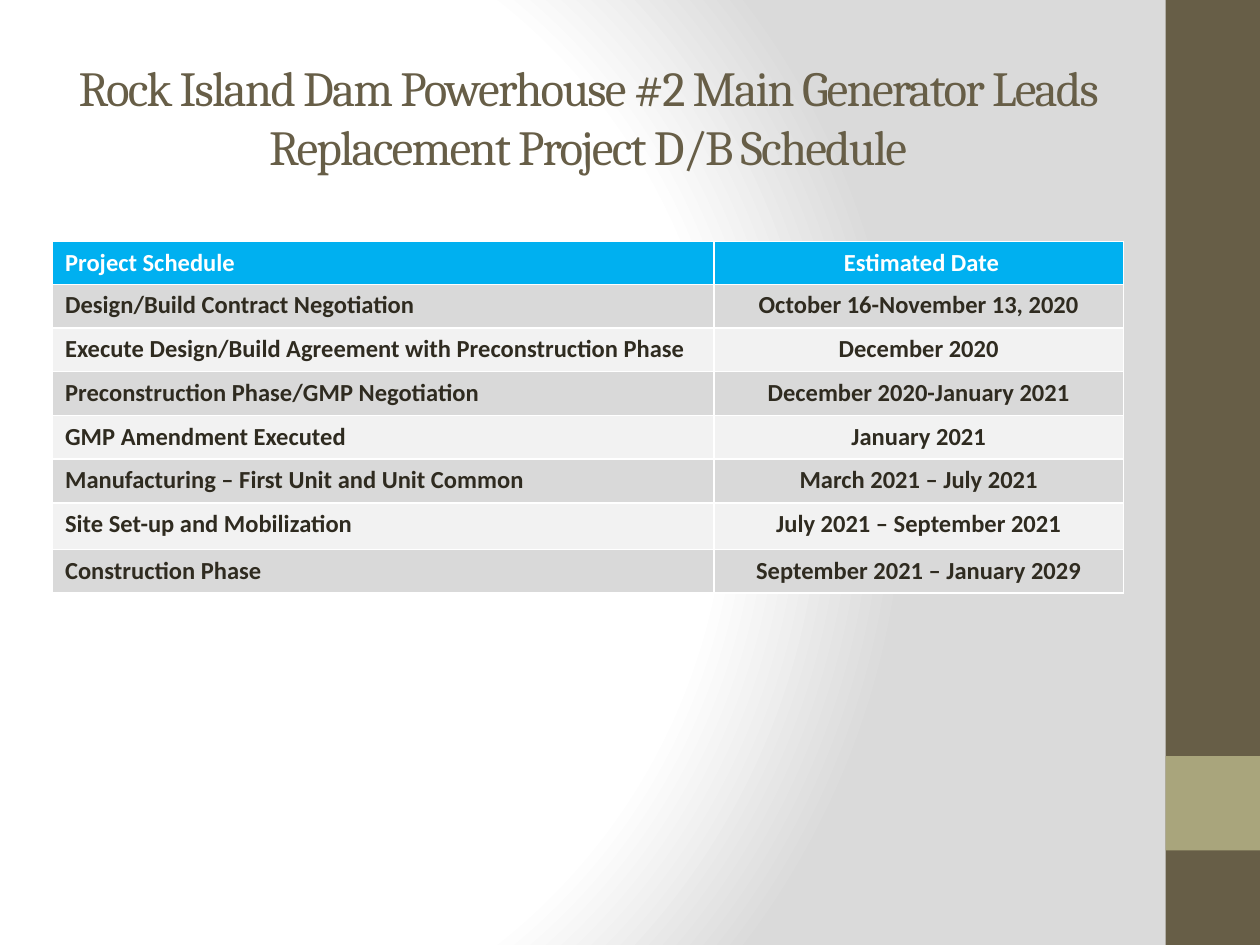
from lxml import etree
from pptx import Presentation
from pptx.dml.color import RGBColor
from pptx.enum.shapes import MSO_SHAPE
from pptx.enum.text import MSO_ANCHOR, PP_ALIGN
from pptx.oxml import parse_xml
from pptx.oxml.ns import nsdecls, qn
from pptx.util import Pt

WHITE = RGBColor(0xFF, 0xFF, 0xFF)
LIGHT_GRAY = RGBColor(0xDA, 0xDA, 0xDA)
BROWN = RGBColor(0x67, 0x5E, 0x47)
KHAKI = RGBColor(0xA9, 0xA5, 0x7C)
BLUE = RGBColor(0x00, 0xB0, 0xF0)
DARK = RGBColor(0x2F, 0x2B, 0x20)
BAND_DARK = RGBColor(0xD9, 0xD9, 0xD9)
BAND_LIGHT = RGBColor(0xF2, 0xF2, 0xF2)

SCHEDULE = [
    ("Project Schedule", " Estimated Date"),
    ("Design/Build Contract Negotiation", "October 16-November 13, 2020"),
    ("Execute Design/Build Agreement with Preconstruction Phase", "December 2020"),
    ("Preconstruction Phase/GMP Negotiation", "December 2020-January 2021"),
    ("GMP Amendment Executed", "January 2021"),
    ("Manufacturing – First Unit and Unit Common", "March 2021 – July 2021"),
    ("Site Set-up and Mobilization", "July 2021 – September 2021"),
    ("Construction Phase", "September 2021 – January 2029"),
]
ROW_HEIGHTS = [24.5, 25, 25, 25, 25, 25, 26.6, 25]
COLUMN_WIDTHS = [378, 234]


def write_text(text_frame, text, font, size, color, bold=False, align=PP_ALIGN.LEFT):
    paragraph = text_frame.paragraphs[0]
    paragraph.alignment = align
    run = paragraph.add_run()
    run.text = text
    run.font.name = font
    run.font.size = Pt(size)
    run.font.bold = bold
    run.font.color.rgb = color
    return run


def add_borders(cell, color, width):
    properties = cell._tc.get_or_add_tcPr()
    for side in ("lnL", "lnR", "lnT", "lnB"):
        line = etree.SubElement(properties, qn(f"a:{side}"), w=str(Pt(width)))
        fill = etree.SubElement(line, qn("a:solidFill"))
        etree.SubElement(fill, qn("a:srgbClr"), val=str(color))


presentation = Presentation()
presentation.slide_width = Pt(720)
presentation.slide_height = Pt(540)
slide = presentation.slides.add_slide(presentation.slide_layouts[5])

# Background: radial gradient, white at the left fading to gray
background_fill = slide.background.fill
background_fill.gradient()
gradient = slide.background._cSld.find(".//" + qn("a:gradFill"))
stops = "".join(
    f'<a:gs pos="{position * 1000}"><a:srgbClr val="{color}"/></a:gs>'
    for position, color in [(0, WHITE), (75, WHITE), (100, LIGHT_GRAY)]
)
gradient.getparent().replace(gradient, parse_xml(
    f'<a:gradFill {nsdecls("a")} rotWithShape="1"><a:gsLst>{stops}</a:gsLst>'
    '<a:path path="circle"><a:fillToRect l="20000" t="50000" r="100000" b="50000"/>'
    '</a:path></a:gradFill>'
))

# Side bar with its accent square
for top, height, color in [(0, 540, BROWN), (432, 54, KHAKI)]:
    bar = slide.shapes.add_shape(MSO_SHAPE.RECTANGLE, Pt(666), Pt(top), Pt(54), Pt(height))
    bar.shadow.inherit = False
    bar.fill.solid()
    bar.fill.fore_color.rgb = color
    bar.line.fill.background()

# Title
title = slide.shapes.title
title.left, title.top, title.width, title.height = Pt(36), Pt(21.6), Pt(600), Pt(90)
title.text_frame.word_wrap = True
title.text_frame.vertical_anchor = MSO_ANCHOR.MIDDLE
title_run = write_text(
    title.text_frame,
    "Rock Island Dam Powerhouse #2 Main Generator Leads Replacement Project D/B Schedule",
    font="Cambria", size=28, color=BROWN, align=PP_ALIGN.CENTER,
)
title_run.font._element.set("spc", "-100")

# Schedule table
table = slide.shapes.add_table(
    len(SCHEDULE), len(COLUMN_WIDTHS),
    Pt(30), Pt(138), Pt(sum(COLUMN_WIDTHS)), Pt(sum(ROW_HEIGHTS)),
).table
table.horz_banding = False
for column, width in zip(table.columns, COLUMN_WIDTHS):
    column.width = Pt(width)
for row_index, (texts, height) in enumerate(zip(SCHEDULE, ROW_HEIGHTS)):
    table.rows[row_index].height = Pt(height)
    if row_index == 0:
        fill_color, text_color = BLUE, WHITE
    else:
        fill_color, text_color = (BAND_DARK if row_index % 2 else BAND_LIGHT), DARK
    for column_index, text in enumerate(texts):
        cell = table.cell(row_index, column_index)
        add_borders(cell, WHITE, 1)
        cell.fill.solid()
        cell.fill.fore_color.rgb = fill_color
        write_text(
            cell.text_frame, text, font="Calibri", size=14, color=text_color, bold=True,
            align=PP_ALIGN.CENTER if column_index else PP_ALIGN.LEFT,
        )

presentation.save("out.pptx")
